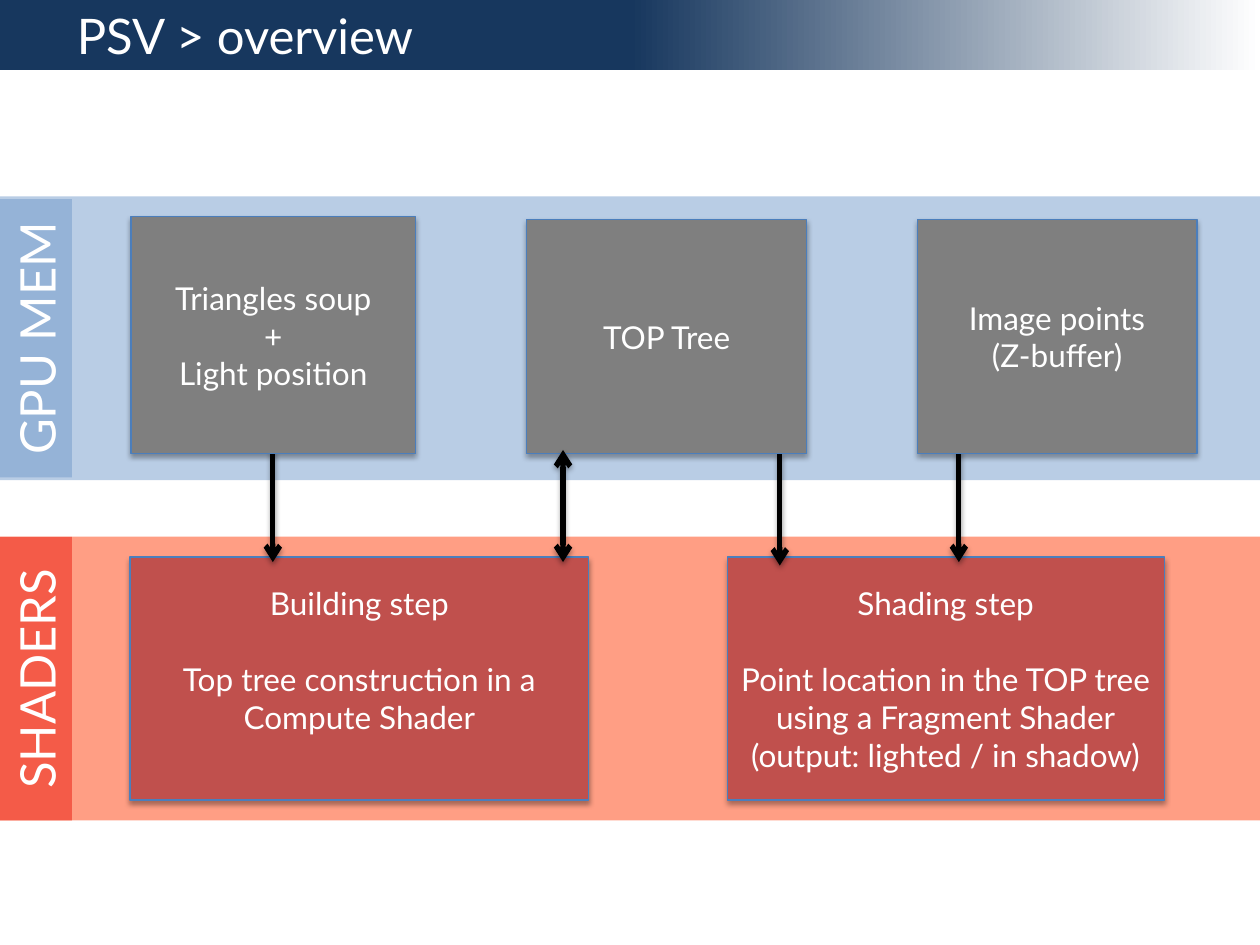
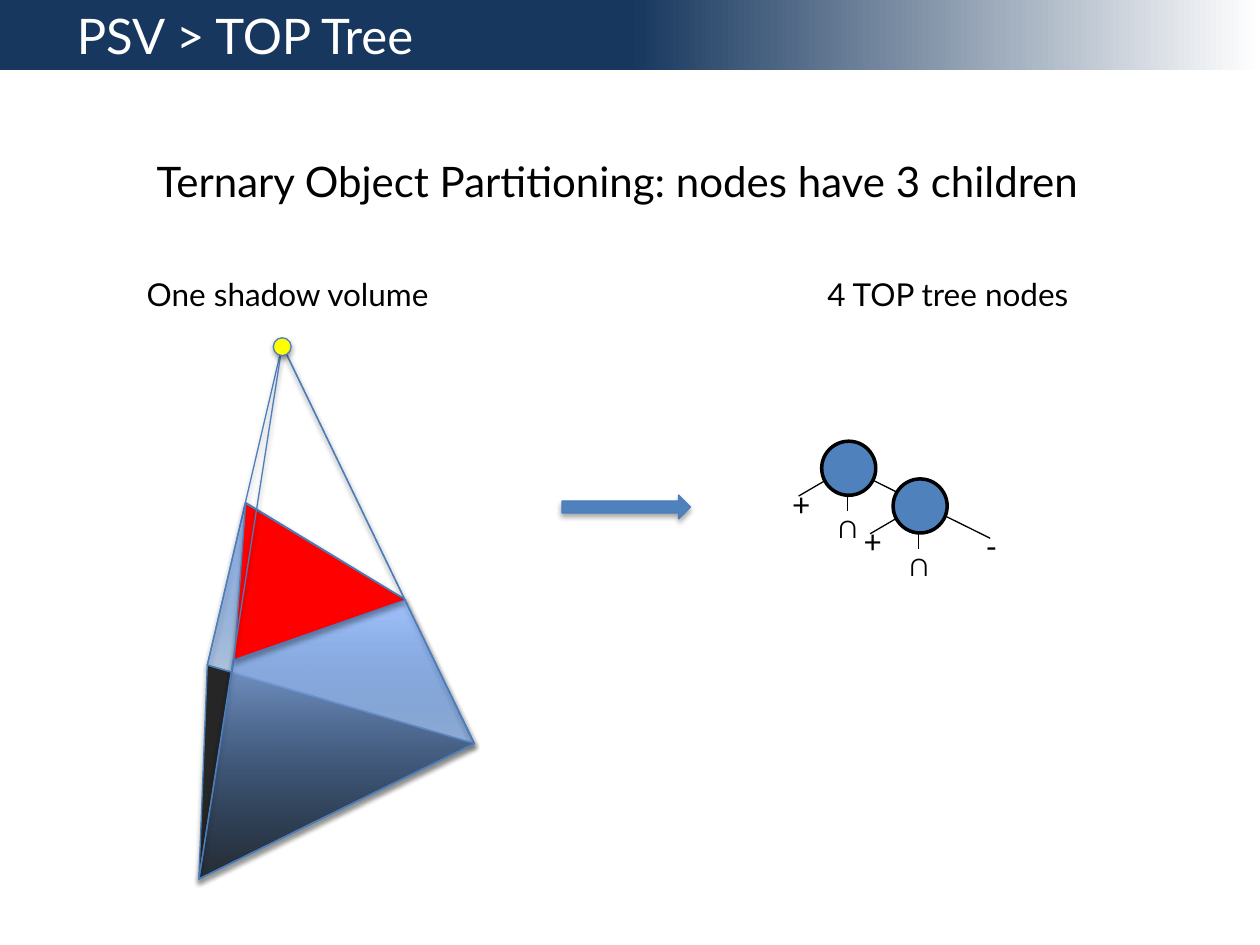
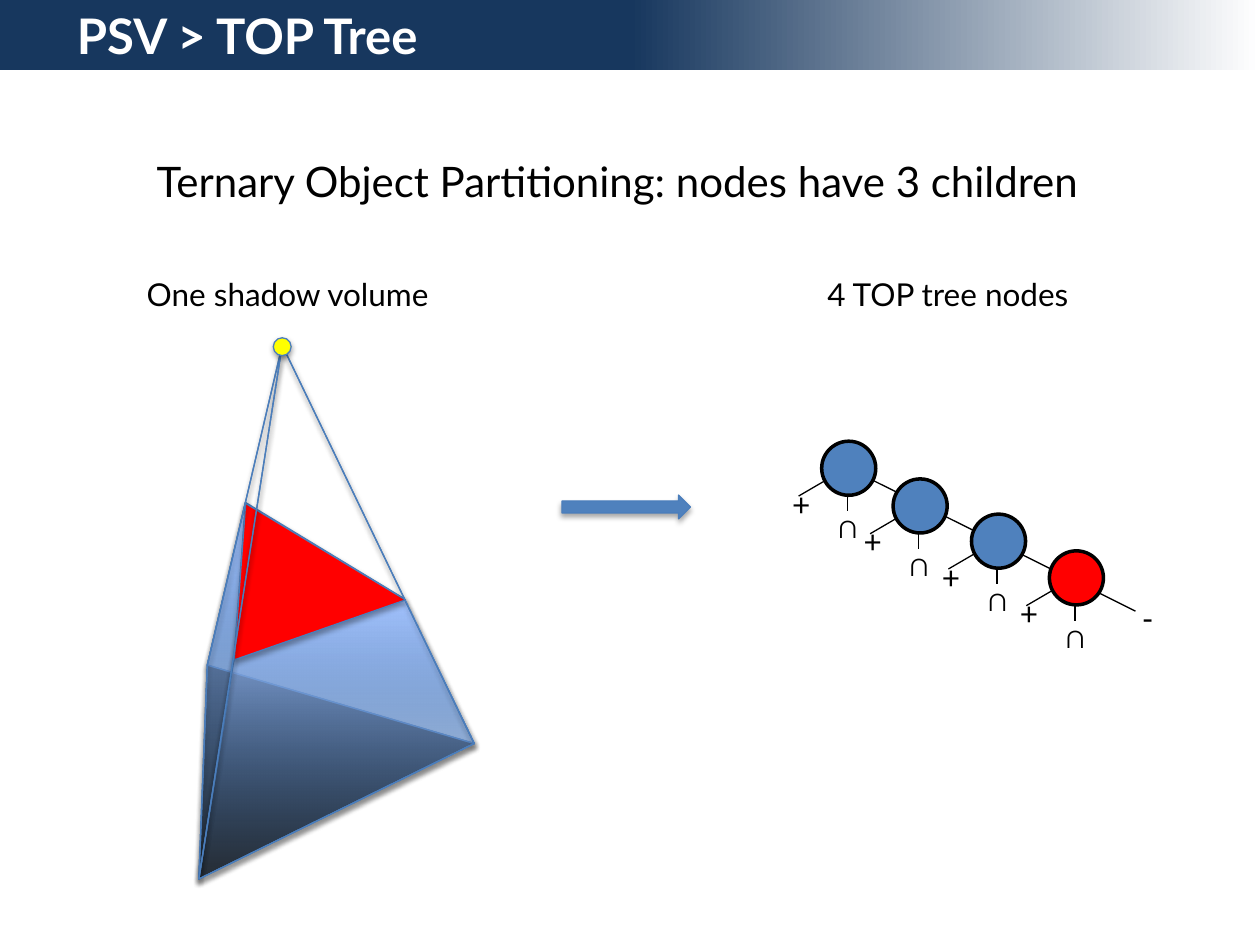
from lxml import etree
from pptx import Presentation
from pptx.dml.color import RGBColor
from pptx.enum.shapes import MSO_CONNECTOR, MSO_SHAPE
from pptx.enum.text import MSO_ANCHOR, MSO_AUTO_SIZE, PP_ALIGN
from pptx.oxml.ns import qn
from pptx.util import Cm, Pt

RECTANGLE, OVAL = MSO_SHAPE.RECTANGLE, MSO_SHAPE.OVAL
TRIANGLE, RIGHT_ARROW = MSO_SHAPE.ISOSCELES_TRIANGLE, MSO_SHAPE.RIGHT_ARROW
STRAIGHT = MSO_CONNECTOR.STRAIGHT
LEFT, CENTER = PP_ALIGN.LEFT, PP_ALIGN.CENTER
TOP, MIDDLE = MSO_ANCHOR.TOP, MSO_ANCHOR.MIDDLE
NO_AUTOSIZE = MSO_AUTO_SIZE.NONE

WHITE = RGBColor(0xFF, 0xFF, 0xFF)
BLACK = RGBColor(0x00, 0x00, 0x00)
NAVY = RGBColor(0x17, 0x37, 0x5E)
BLUE = RGBColor(0x4F, 0x81, 0xBD)
OUTLINE_BLUE = RGBColor(0x4B, 0x7E, 0xBC)
FACE_LIGHT = RGBColor(0xA4, 0xC4, 0xFF)
FACE_DEEP = RGBColor(0x3F, 0x80, 0xCE)
MEMORY_BAND = RGBColor(0xB9, 0xCD, 0xE5)
MEMORY_LABEL = RGBColor(0x95, 0xB3, 0xD7)
SHADER_BAND = RGBColor(0xFF, 0x9E, 0x84)
SHADER_LABEL = RGBColor(0xF4, 0x5B, 0x48)
STEP_RED = RGBColor(0xC0, 0x50, 0x4D)
GREY = RGBColor(0x7F, 0x7F, 0x7F)
CHARCOAL = RGBColor(0x26, 0x26, 0x26)
RED = RGBColor(0xFF, 0x00, 0x00)
YELLOW = RGBColor(0xFF, 0xFF, 0x00)

FONT = "Lato"
SLIDE_WIDTH, SLIDE_HEIGHT = 25.4, 19.05
LAYER_HEIGHT, LABEL_DEPTH = 5.72, 1.45
NODE_SIZE = 1.09

# Corners of the shadow volume in cm: the lit triangle and its projection
LIGHT = (5.69, 6.96)
NEAR_BACK, NEAR_RIGHT, NEAR_FRONT = (4.95, 10.13), (8.15, 12.07), (4.72, 13.28)
FAR_BACK, FAR_RIGHT, FAR_FRONT = (4.18, 13.41), (9.56, 14.99), (4.01, 17.72)

NODE_CENTERS = [(17.11, 9.44), (18.55, 10.2), (20.13, 10.91), (21.7, 11.65)]


def add_shadow(effects, opacity, distance):
    shadow = etree.SubElement(
        effects, qn("a:outerShdw"), blurRad=str(Pt(3.1)), dist=str(Pt(distance)),
        dir="5400000", rotWithShape="0")
    color = etree.SubElement(shadow, qn("a:srgbClr"), val=str(BLACK))
    etree.SubElement(color, qn("a:alpha"), val=str(opacity * 1000))


def set_gradient(fill, stops, angle):
    """Fill with two (position, colour) stops."""
    fill.gradient()
    fill.gradient_angle = angle
    for stop, (position, color) in zip(fill.gradient_stops, stops):
        stop.position = position
        stop.color.rgb = color


def style_shape(shape, fill=None, line=OUTLINE_BLUE, weight=0.75, shadow=True):
    if fill is None:
        shape.fill.background()
    else:
        shape.fill.solid()
        shape.fill.fore_color.rgb = fill
    if line is None:
        shape.line.fill.background()
    else:
        shape.line.color.rgb = line
        shape.line.width = Pt(weight)
    shape.shadow.inherit = False
    if shadow:
        add_shadow(shape._element.spPr.find(qn("a:effectLst")), 35, 1.8)


def write_text(shape, *lines, size=18, color=WHITE, bold=False, align=CENTER,
               anchor=MIDDLE, wrap=True, gap=0, left=0.25, top=0.13):
    """Write one paragraph per line; gap is the space in points after the first."""
    frame = shape.text_frame
    frame.auto_size = NO_AUTOSIZE
    frame.word_wrap = wrap
    frame.vertical_anchor = anchor
    frame.margin_left, frame.margin_top = Cm(left), Cm(top)
    for index, line in enumerate(lines):
        para = frame.add_paragraph() if index else frame.paragraphs[0]
        para.alignment = align
        para.space_before = Pt(gap if index == 1 else 0)
        span = para.add_run()
        span.text = line
        font = span.font
        font.name, font.size, font.bold = FONT, Pt(size), bold
        font.color.rgb = color


def add_preset(slide, kind, left, top, width, height, fill, **style):
    shape = slide.shapes.add_shape(kind, Cm(left), Cm(top), Cm(width), Cm(height))
    style_shape(shape, fill, **style)
    return shape


def add_label(slide, text, left, top, width, height=1.02, **style):
    box = slide.shapes.add_textbox(Cm(left), Cm(top), Cm(width), Cm(height))
    write_text(box, text, color=BLACK, anchor=TOP, **style)


def add_line(slide, start, end, weight=0.75):
    line = slide.shapes.add_connector(
        STRAIGHT, Cm(start[0]), Cm(start[1]), Cm(end[0]), Cm(end[1]))
    line.line.color.rgb = BLACK
    line.line.width = Pt(weight)
    etree.SubElement(line._element.spPr, qn("a:effectLst"))
    return line


def add_data_arrow(slide, x, top=9.07, ends=("tailEnd",)):
    arrow = add_line(slide, (x, top), (x, top + 2.26), weight=3)
    properties = arrow._element.spPr
    for end in ends:
        etree.SubElement(properties.find(qn("a:ln")), qn("a:" + end), type="arrow")
    add_shadow(properties.find(qn("a:effectLst")), 38, 1.6)


def add_polygon(slide, *corners, fill=None):
    points = [(Cm(x), Cm(y)) for x, y in corners]
    builder = slide.shapes.build_freeform(*points[0], scale=1.0)
    builder.add_line_segments(points[1:], close=True)
    polygon = builder.convert_to_shape()
    style_shape(polygon, fill)
    return polygon


def add_glass_face(slide, *corners):
    """Add a face that fades from opaque at its top to nearly clear below."""
    face = add_polygon(slide, *corners)
    set_gradient(face.fill, [(0, FACE_DEEP), (1, FACE_LIGHT)], 90)
    deep_color = next(face._element.spPr.iter(qn("a:srgbClr")))
    etree.SubElement(deep_color, qn("a:alpha"), val="10000")


def add_titled_slide(deck, text, bold=False):
    slide = deck.slides.add_slide(deck.slide_layouts[5])
    title = slide.shapes.title
    title.left, title.top = Cm(0), Cm(-0.03)
    title.width, title.height = Cm(SLIDE_WIDTH), Cm(1.45)
    set_gradient(title.fill, [(0.5, NAVY), (1, WHITE)], 0)
    write_text(title, text, size=28, bold=bold, align=LEFT, left=1.55)
    return slide


def add_layer(slide, top, band_color, text, label_color, label_length):
    """Add a full-width band with a label turned upwards at its left edge."""
    add_preset(slide, RECTANGLE, 0, top, SLIDE_WIDTH, LAYER_HEIGHT, band_color,
               line=None, shadow=False)
    label = add_preset(
        slide, RECTANGLE, (LABEL_DEPTH - label_length) / 2,
        top + (LAYER_HEIGHT - LABEL_DEPTH) / 2, label_length, LABEL_DEPTH,
        label_color, line=None, shadow=False)
    label.rotation = 270
    write_text(label, text, size=28)


def add_memory_box(slide, left, top, width, height, *lines):
    box = add_preset(slide, RECTANGLE, left, top, width, height, GREY)
    write_text(box, *lines)


def add_step_box(slide, left, width, *lines):
    box = add_preset(slide, RECTANGLE, left, 11.23, width, 4.9, STEP_RED)
    write_text(box, *lines, anchor=TOP, top=0.55, gap=21.6)


def add_shadow_volume(slide, with_side):
    add_glass_face(slide, NEAR_BACK, NEAR_RIGHT, FAR_RIGHT, FAR_BACK)
    add_polygon(slide, FAR_RIGHT, LIGHT, FAR_BACK)
    add_polygon(slide, FAR_FRONT, FAR_BACK, FAR_RIGHT, fill=CHARCOAL)
    if with_side:
        add_glass_face(slide, NEAR_BACK, NEAR_FRONT, FAR_FRONT, FAR_BACK)
    add_glass_face(slide, NEAR_FRONT, NEAR_RIGHT, FAR_RIGHT, FAR_FRONT)
    occluder = add_preset(slide, TRIANGLE, 4.14, 9.88, 3.66, 2.9, RED)
    occluder.adjustments[0] = 0.344
    occluder.rotation = 340.7
    if with_side:
        add_polygon(slide, FAR_BACK, LIGHT, FAR_FRONT)
    add_polygon(slide, FAR_RIGHT, LIGHT, FAR_FRONT)
    add_preset(slide, OVAL, 5.51, 6.81, 0.36, 0.36, YELLOW)


def add_top_tree(slide, colors, spine_end):
    """Add one node per colour along a spine, each with + and ∩ children."""
    nodes = list(zip(NODE_CENTERS, colors))
    for (x, y), _ in nodes:
        add_line(slide, (x - 0.03, y + 0.22), (x - 0.03, y + 0.86))
        add_line(slide, (x - 0.05, y), (x - 1.01, y + 0.56))
    add_line(slide, NODE_CENTERS[0], spine_end)
    for (x, y), color in nodes:
        add_preset(slide, OVAL, x - NODE_SIZE / 2, y - NODE_SIZE / 2, NODE_SIZE,
                   NODE_SIZE, color, line=BLACK, weight=2, shadow=False)
    for (x, y), _ in nodes:
        add_label(slide, "+", x - 1.39, y + 0.2, 0.94, align=LEFT, wrap=False)
        add_label(slide, "∩", x - 0.46, y + 0.66, 1.14, align=LEFT, wrap=False)
    last_x, last_y = nodes[-1][0]
    add_label(slide, "-", last_x + 1.07, last_y + 0.29, 0.74, align=LEFT, wrap=False)


def add_overview_slide(deck):
    slide = add_titled_slide(deck, "PSV > overview")
    add_layer(slide, 3.96, MEMORY_BAND, "GPU MEM", MEMORY_LABEL, 5.61)
    add_layer(slide, 10.82, SHADER_BAND, "SHADERS", SHADER_LABEL, LAYER_HEIGHT)
    add_step_box(slide, 2.62, 9.25, "Building step",
                 "Top tree construction in a Compute Shader")
    add_step_box(slide, 14.66, 8.81, "Shading step",
                 "Point location in the TOP tree using a Fragment Shader",
                 "(output: lighted / in shadow)")
    add_data_arrow(slide, 5.5)
    add_data_arrow(slide, 15.72, top=9.14)
    add_data_arrow(slide, 19.33)
    add_memory_box(slide, 2.64, 4.37, 5.74, 4.78,
                   "Triangles soup", "+", "Light position")
    add_memory_box(slide, 10.62, 4.42, 5.64, 4.72, "TOP Tree")
    add_memory_box(slide, 18.49, 4.42, 5.64, 4.72, "Image points", "(Z-buffer)")
    add_data_arrow(slide, 11.35, ends=("headEnd", "tailEnd"))


def add_tree_slide(deck, node_colors, spine_end, complete):
    slide = add_titled_slide(deck, "PSV > TOP Tree", bold=complete)
    add_label(slide, "Ternary Object Partitioning: nodes have 3 children",
              1.6, 3, 21.69, 1.27, size=24)
    add_label(slide, "One shadow volume", 2.3, 5.41, 7)
    add_label(slide, "4 TOP tree nodes", 15.61, 5.41, 7)
    add_shadow_volume(slide, with_side=complete)
    add_preset(slide, RIGHT_ARROW, 11.33, 9.98, 2.59, 0.48, BLUE)
    add_top_tree(slide, node_colors, spine_end)


def main():
    deck = Presentation()
    deck.slide_width, deck.slide_height = Cm(SLIDE_WIDTH), Cm(SLIDE_HEIGHT)
    add_overview_slide(deck)
    add_tree_slide(deck, [BLUE] * 2, (19.96, 10.85), complete=False)
    add_tree_slide(deck, [BLUE] * 3 + [RED], (22.89, 12.32), complete=True)
    deck.save("out.pptx")


if __name__ == "__main__":
    main()
